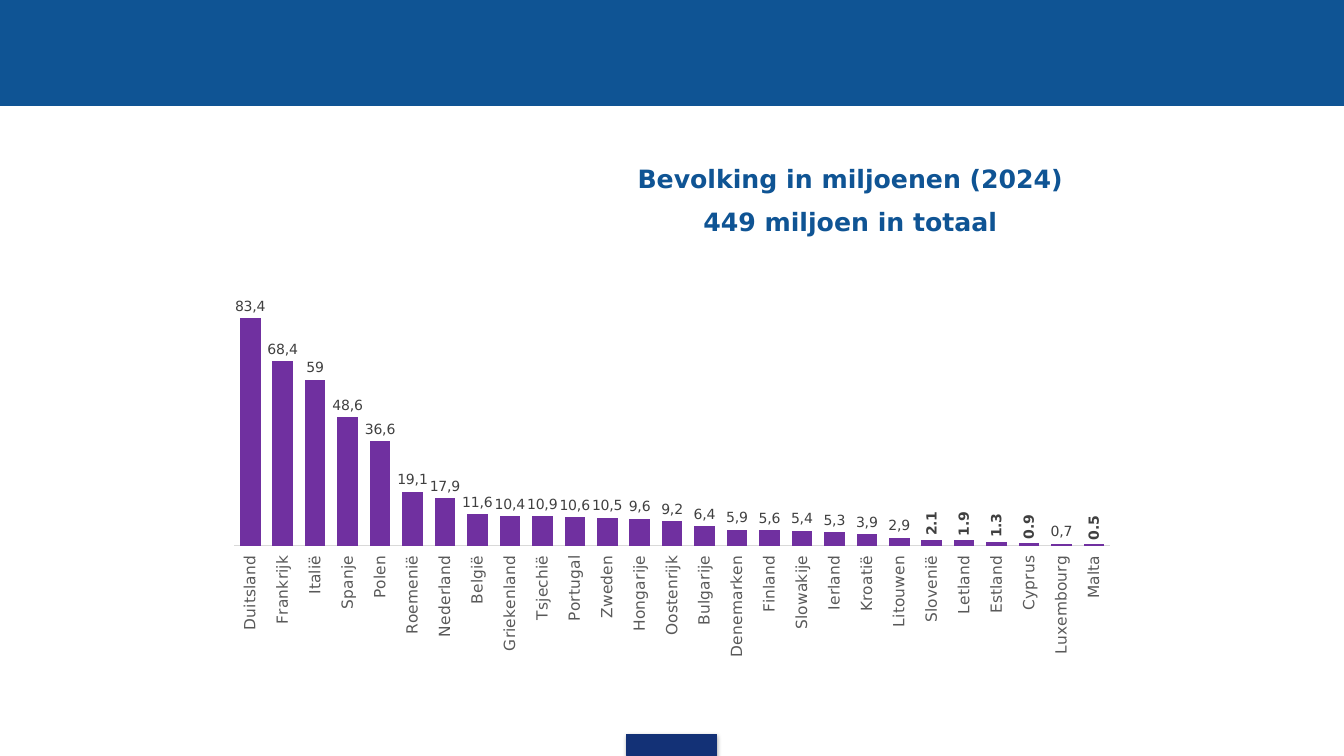
from lxml import etree
from pptx import Presentation
from pptx.chart.data import CategoryChartData
from pptx.dml.color import RGBColor
from pptx.enum.chart import XL_CHART_TYPE as ChartType
from pptx.enum.chart import XL_LABEL_POSITION as LabelPosition
from pptx.enum.chart import XL_TICK_LABEL_POSITION as TickLabelPosition
from pptx.enum.chart import XL_TICK_MARK as TickMark
from pptx.enum.shapes import MSO_SHAPE as Shape
from pptx.enum.text import MSO_ANCHOR as Anchor
from pptx.enum.text import PP_ALIGN as Align
from pptx.oxml import parse_xml
from pptx.oxml.ns import nsdecls, qn
from pptx.util import Cm, Pt

FONT = "DejaVu Sans"
COLORS = {
    "blue": "0F5494", "navy": "133176", "purple": "7030A0", "label": "404040",
    "axis_text": "595959", "axis_line": "D9D9D9", "black": "000000",
}
TITLE_LINES = ["Bevolking in miljoenen (2024)", "449 miljoen in totaal"]
# Country, bar value, written label (None shows the value itself)
POPULATION = [
    ("Duitsland", 82.9, "83,4"), ("Frankrijk", 67.2, "68,4"), ("Italië", 60.4, "59"),
    ("Spanje", 46.7, "48,6"), ("Polen", 38, "36,6"), ("Roemenië", 19.5, "19,1"),
    ("Nederland", 17.2, "17,9"), ("België", 11.4, "11,6"), ("Griekenland", 10.7, "10,4"),
    ("Tsjechië", 10.6, "10,9"), ("Portugal", 10.3, "10,6"), ("Zweden", 10.1, "10,5"),
    ("Hongarije", 9.8, "9,6"), ("Oostenrijk", 8.8, "9,2"), ("Bulgarije", 7.1, "6,4"),
    ("Denemarken", 5.8, "5,9"), ("Finland", 5.5, "5,6"), ("Slowakije", 5.4, "5,4"),
    ("Ierland", 4.8, "5,3"), ("Kroatië", 4.1, "3,9"), ("Litouwen", 2.8, "2,9"),
    ("Slovenië", 2.1, None), ("Letland", 1.9, None), ("Estland", 1.3, None),
    ("Cyprus", 0.9, None), ("Luxembourg", 0.6, "0,7"), ("Malta", 0.5, None),
]
PLOT_AREA = {"x": 0.017, "y": 0.061, "w": 0.966, "h": 0.635}


def rgb(name):
    return RGBColor.from_string(COLORS[name])


def set_font(font, size, color, bold=False):
    values = {"name": FONT, "size": Pt(size), "bold": bold}
    for attribute, value in values.items():
        setattr(font, attribute, value)
    font.color.rgb = rgb(color)


def set_rotation(element, degrees):
    """Turn every text body below a chart element."""
    for body in element.iter(qn("a:bodyPr")):
        body.set("rot", str(degrees * 60000))
        body.set("vert", "horz")


def add_block(slide, left, top, width, height, color):
    shape = slide.shapes.add_shape(Shape.RECTANGLE, Cm(left), Cm(top), Cm(width), Cm(height))
    shape.shadow.inherit = False
    shape.fill.solid()
    shape.fill.fore_color.rgb = rgb(color)
    shape.line.color.rgb = rgb(color)
    shape.line.width = Pt(0.75)
    return shape


def add_soft_shadow(shape):
    effects = shape._element.spPr.find(qn("a:effectLst"))
    effects.append(parse_xml(
        f'<a:outerShdw {nsdecls("a")} blurRad="{Pt(3.1)}" dist="{Pt(1.8)}" '
        f'dir="5400000" rotWithShape="0"><a:srgbClr val="{COLORS["black"]}">'
        '<a:alpha val="35000"/></a:srgbClr></a:outerShdw>'))


def add_title(slide):
    box = slide.shapes.add_textbox(Cm(5.69), Cm(3.94), Cm(30.48), Cm(2.18))
    frame = box.text_frame
    frame.word_wrap = True
    frame.vertical_anchor = Anchor.MIDDLE
    for index, line in enumerate(TITLE_LINES):
        paragraph = frame.add_paragraph() if index else frame.paragraphs[0]
        paragraph.alignment = Align.CENTER
        paragraph._p.get_or_add_pPr().set("marL", str(Cm(1)))
        if index:
            paragraph.space_before = Pt(9)
        run = paragraph.add_run()
        run.text = line
        set_font(run.font, 18, "blue", bold=True)


def set_plot_area(chart):
    plot_area = chart._chartSpace.chart.plotArea
    for layout in plot_area.findall(qn("c:layout")):
        plot_area.remove(layout)
    layout = etree.Element(qn("c:layout"))
    manual = etree.SubElement(layout, qn("c:manualLayout"))
    settings = {"layoutTarget": "inner", "xMode": "edge", "yMode": "edge", **PLOT_AREA}
    for tag, value in settings.items():
        etree.SubElement(manual, qn(f"c:{tag}")).set("val", str(value))
    plot_area.insert(0, layout)


def format_axes(chart):
    countries = chart.category_axis
    countries.major_tick_mark = countries.minor_tick_mark = TickMark.NONE
    countries.tick_label_position = TickLabelPosition.LOW
    countries.format.line.color.rgb = rgb("axis_line")
    countries.format.line.width = Pt(0.75)
    set_font(countries.tick_labels.font, 11, "axis_text")
    set_rotation(countries._element, -90)
    values = chart.value_axis
    values.has_major_gridlines = False
    values.minimum_scale, values.maximum_scale = 0, 90
    values.visible = False


def label_bars(series):
    labels = series.data_labels
    labels.show_value = True
    labels.number_format = "#,##0.0;[Red]#,##0.0"
    labels.number_format_is_linked = False
    labels.position = LabelPosition.OUTSIDE_END
    set_font(labels.font, 10, "label", bold=True)
    set_rotation(labels._element, -90)
    for index, (_, _, text) in enumerate(POPULATION):
        if text is None:
            continue
        label = series.points[index].data_label
        run = label.text_frame.paragraphs[0].add_run()
        run.text = text
        set_font(run.font, 10, "label")
        label.position = LabelPosition.OUTSIDE_END
        set_rotation(label.text_frame._txBody, 0)


def add_population_chart(slide):
    data = CategoryChartData()
    data.categories = [country for country, _, _ in POPULATION]
    data.add_series("Series 1", [value for _, value, _ in POPULATION])
    chart = slide.shapes.add_chart(
        ChartType.COLUMN_CLUSTERED, Cm(5.51), Cm(6.93), Cm(22.86), Cm(9.8), data).chart
    chart.has_legend = False
    chart.has_title = False
    set_font(chart.font, 10, "black")
    set_plot_area(chart)
    format_axes(chart)
    plot = chart.plots[0]
    plot.vary_by_categories = False
    plot.gap_width, plot.overlap = 58, -27
    series = plot.series[0]
    series.format.fill.solid()
    series.format.fill.fore_color.rgb = rgb("purple")
    label_bars(series)


def main():
    presentation = Presentation()
    presentation.slide_width, presentation.slide_height = Cm(33.87), Cm(19.05)
    slide = presentation.slides.add_slide(presentation.slide_layouts[6])
    add_block(slide, 0, 0, 33.87, 2.67, "blue")
    add_soft_shadow(add_block(slide, 15.8, 18.5, 2.26, 0.55, "navy"))
    add_title(slide)
    add_population_chart(slide)
    presentation.save("out.pptx")


if __name__ == "__main__":
    main()
